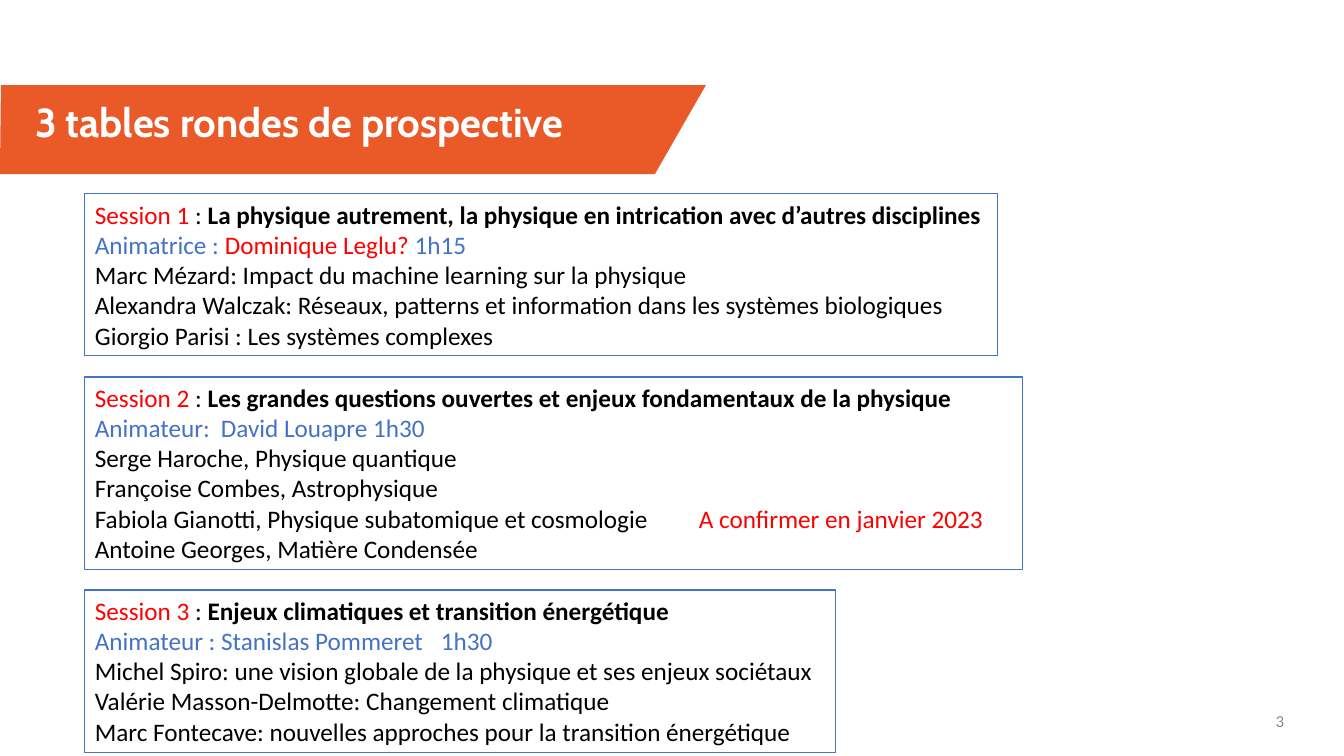
from lxml.etree import SubElement
from pptx import Presentation
from pptx.dml.color import RGBColor
from pptx.enum.text import MSO_ANCHOR, MSO_AUTO_SIZE, PP_ALIGN
from pptx.oxml.ns import qn
from pptx.util import Emu, Pt

SCALE = 12192000 / 1344
COLORS = {
    "orange": "EA5A28",
    "white": "FFFFFF",
    "black": "000000",
    "red": "FF0000",
    "blue": "4472C4",
    "grey": "8C8C8C",
}

# Each session: left, top, width, height, tab stops by line, lines of (text, color, bold)
SESSIONS = [
    (85, 194, 913, 162, {}, [
        [("Session 1 ", "red"), (": ", "black"),
         ("La physique autrement, la physique en intrication avec d’autres disciplines", "black", True)],
        [("Animatrice : ", "blue"), ("Dominique Leglu? ", "red"), ("1h15", "blue")],
        [("Marc Mézard: Impact du machine learning sur la physique", "black")],
        [("Alexandra Walczak: Réseaux, patterns et information dans les systèmes biologiques", "black")],
        [("Giorgio Parisi : Les systèmes complexes", "black")],
    ]),
    (85, 377, 938, 193, {1: 126, 4: 604}, [
        [("Session 2 ", "red"), (": ", "black"),
         ("Les grandes questions ouvertes et enjeux fondamentaux de la physique", "black", True)],
        [("Animateur:\tDavid Louapre 1h30", "blue")],
        [("Serge Haroche, Physique quantique", "black")],
        [("Françoise Combes, Astrophysique", "black")],
        [("Fabiola Gianotti, Physique subatomique et cosmologie\t", "black"),
         ("A confirmer en janvier 2023", "red")],
        [("Antoine Georges, Matière Condensée", "black")],
    ]),
    (85, 590, 751, 163, {1: 346}, [
        [("Session 3", "red"), (" : ", "black"),
         ("Enjeux climatiques et transition énergétique", "black", True)],
        [("Animateur : Stanislas Pommeret\t1h30", "blue")],
        [("Michel Spiro: une vision globale de la physique et ses enjeux sociétaux", "black")],
        [("Valérie Masson-Delmotte: Changement climatique", "black")],
        [("Marc Fontecave: nouvelles approches pour la transition énergétique", "black")],
    ]),
]


def px(length):
    return Emu(round(length * SCALE))


def rgb(name):
    return RGBColor.from_string(COLORS[name])


def write(paragraph, text, color="black", bold=False, size=18, font="Calibri"):
    run = paragraph.add_run()
    run.text = text
    run.font.name = font
    run.font.size = Pt(size)
    run.font.bold = bold
    run.font.color.rgb = rgb(color)


def add_tab_stop(paragraph, position):
    stops = SubElement(paragraph._p.get_or_add_pPr(), qn("a:tabLst"))
    SubElement(stops, qn("a:tab"), pos=str(px(position)), algn="l")


def add_banner(slide):
    builder = slide.shapes.build_freeform(655, 174, scale=SCALE)
    builder.add_line_segments([(0, 174), (1, 85), (706, 85)], close=True)
    banner = builder.convert_to_shape()
    banner.shadow.inherit = False
    banner.fill.solid()
    banner.fill.fore_color.rgb = rgb("orange")
    banner.line.fill.background()


def add_title(slide, text):
    title = slide.shapes.title
    title.left, title.top, title.width, title.height = map(px, (25, 98, 667, 56))
    frame = title.text_frame
    frame.auto_size = MSO_AUTO_SIZE.NONE
    frame.vertical_anchor = MSO_ANCHOR.TOP
    heading = frame.paragraphs[0]
    heading.alignment = PP_ALIGN.LEFT
    heading.line_spacing = 0.9
    write(heading, text, color="white", bold=True, size=28.8, font="Cabin")
    # Bring the title in front of the banner
    slide.shapes._spTree.append(title._element)


def add_session(slide, left, top, width, height, tab_stops, lines):
    box = slide.shapes.add_textbox(*map(px, (left, top, width, height)))
    box.line.color.rgb = rgb("blue")
    box.line.width = Pt(0.75)
    frame = box.text_frame
    frame.word_wrap = True
    frame.auto_size = MSO_AUTO_SIZE.SHAPE_TO_FIT_TEXT
    for index, line in enumerate(lines):
        paragraph = frame.add_paragraph() if index else frame.paragraphs[0]
        if index in tab_stops:
            add_tab_stop(paragraph, tab_stops[index])
        for part in line:
            write(paragraph, *part)


def add_page_number(slide, number):
    box = slide.shapes.add_textbox(*map(px, (1232, 701, 62, 40)))
    frame = box.text_frame
    frame.word_wrap = True
    frame.vertical_anchor = MSO_ANCHOR.MIDDLE
    frame.paragraphs[0].alignment = PP_ALIGN.RIGHT
    write(frame.paragraphs[0], number, color="grey", size=12)


def main():
    deck = Presentation()
    deck.slide_width, deck.slide_height = px(1344), px(756)
    slide = deck.slides.add_slide(deck.slide_layouts[5])
    add_banner(slide)
    add_title(slide, "3 tables rondes de prospective")
    for session in SESSIONS:
        add_session(slide, *session)
    add_page_number(slide, "3")
    deck.save("out.pptx")


if __name__ == "__main__":
    main()
